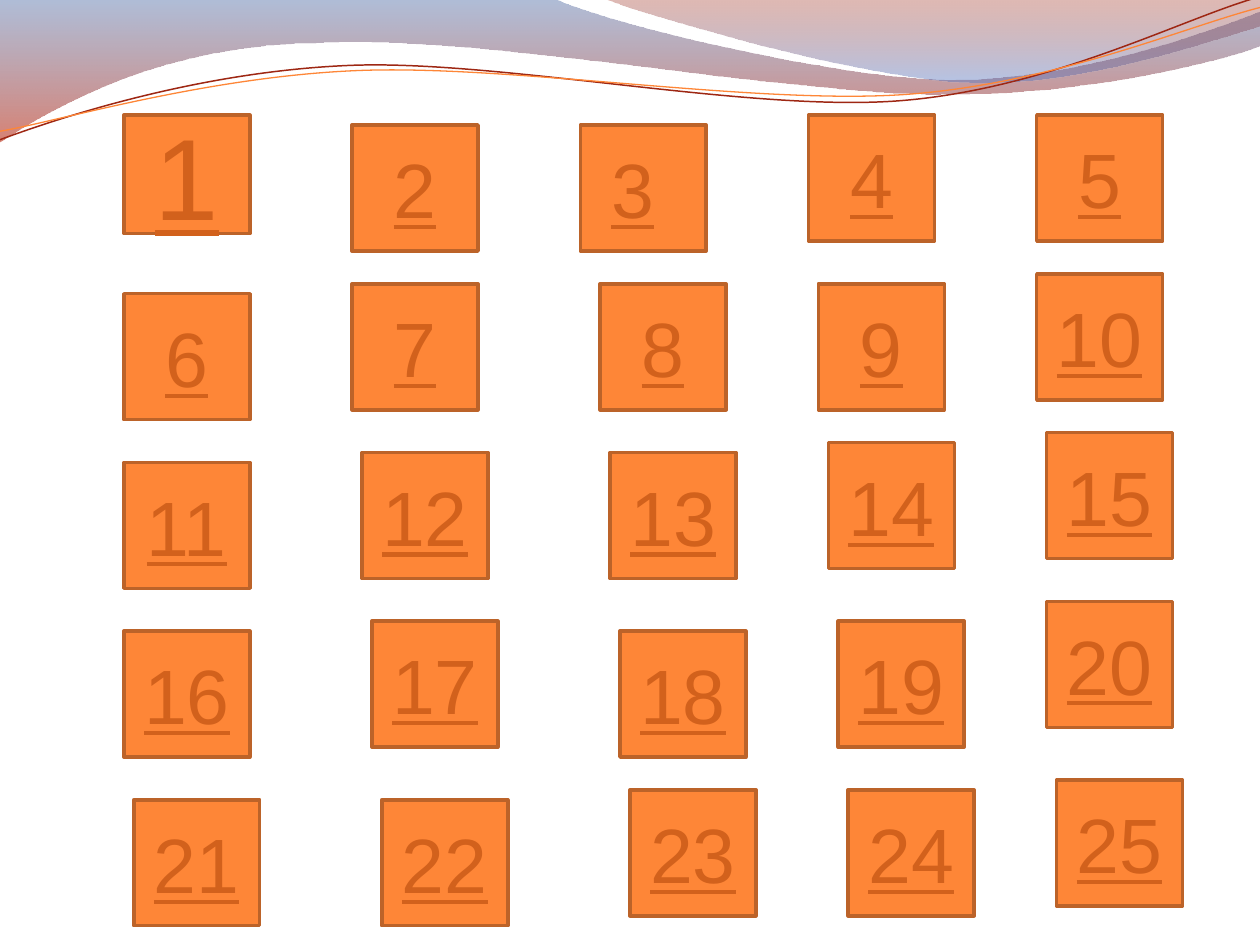
from dataclasses import dataclass
from typing import Optional

from lxml import etree
from pptx import Presentation
from pptx.dml.color import RGBColor
from pptx.enum.shapes import MSO_SHAPE
from pptx.enum.text import MSO_ANCHOR, PP_ALIGN
from pptx.oxml.ns import qn
from pptx.util import Pt

RECTANGLE = MSO_SHAPE.RECTANGLE
CENTER = PP_ALIGN.CENTER
MIDDLE = MSO_ANCHOR.MIDDLE

BLANK_LAYOUT = 6
COLUMN_COUNT = 5

# Tiles sit on a fine grid, and each is nudged by whole grid steps.
GRID_STEP = 5.67
GRID_LEFT, GRID_TOP = 70.8, 65.8
COLUMN_STEPS, ROW_STEPS = 23, 17
TILE_SIZE = 72
FIRST_TILE_HEIGHT = 67.7
NUDGES = (
    ((0, 0), (0, 1), (0, 1), (0, 0), (0, 0)),
    ((0, 1), (0, 0), (2, 0), (1, 0), (0, -1)),
    ((0, 1), (1, 0), (3, 0), (2, -1), (1, -2)),
    ((0, 1), (2, 0), (4, 1), (3, 0), (1, -2)),
    ((1, 1), (3, 1), (5, 0), (4, 0), (2, -1)),
)

Point = tuple[float, float]


@dataclass(frozen=True)
class Theme:
    font: str = "Arial"
    number_size: float = 44
    first_number_size: float = 66
    tile_fill: str = "FE8637"
    tile_border: str = "BC6329"
    tile_border_width: float = 2
    number: str = "D2611C"
    dark_line: str = "9E2713"
    light_line: str = "FE8637"


@dataclass(frozen=True)
class GradientStop:
    color: str
    opacity: int


@dataclass(frozen=True)
class Wave:
    """A segment holds one point for a straight line, three for a cubic curve."""
    start: Point
    segments: tuple[tuple[Point, ...], ...]
    gradient: tuple[GradientStop, ...] = ()
    line_color: Optional[str] = None
    line_width: float = 0
    rotation: float = 0


@dataclass(frozen=True)
class Tile:
    number: int
    left: float
    top: float
    height: float = TILE_SIZE
    number_size: float = Theme.number_size
    right_inset: float = 7.2


THEME = Theme()
LINE_ROTATION = 357.3

WAVES = (
    Wave(
        (0, -0.7),
        (
            ((316.8, -0.7),),
            ((342.7, 12.2), (478.1, 45.4), (545.8, 45.4)),
            ((614.2, 45.4), (689.8, 18.7), (720, 6.5)),
            ((720.7, 25.9),),
            ((707.8, 31.7), (626.4, 54.7), (537.1, 54)),
            ((447.8, 54), (275, 20.2), (185, 24.5)),
            ((92.9, 25.2), (33.1, 59.8), (-0.7, 81.4)),
        ),
        gradient=(GradientStop("4F6EA8", 45), GradientStop("B61A00", 55)),
    ),
    Wave(
        (344.9, -0.7),
        (
            ((366.5, 7.9), (491, 44.6), (553.7, 46.8)),
            ((616.3, 49.7), (691.9, 23), (720, 15.1)),
            ((720, 0),),
        ),
        gradient=(GradientStop("951500", 30), GradientStop("5681D1", 45)),
    ),
    Wave(
        (-1.4, 62.9),
        (
            ((33.8, 51.7), (114.1, 29.4), (199.8, 29.9)),
            ((284.9, 30.3), (425.8, 67.3), (512.4, 64.9)),
            ((599, 62.4), (676.4, 25.7), (720.2, 15.5)),
        ),
        line_color=THEME.dark_line,
        line_width=0.85,
        rotation=LINE_ROTATION,
    ),
    Wave(
        (-1.1, 58),
        (
            ((32.9, 53.8), (118.3, 32.5), (204.1, 33)),
            ((290.6, 33.4), (428.9, 63.1), (515.5, 61.4)),
            ((601.3, 59.6), (678.4, 30.1), (721.4, 21.3)),
        ),
        line_color=THEME.light_line,
        line_width=0.75,
        rotation=LINE_ROTATION,
    ),
)


def rgb(color: str) -> RGBColor:
    return RGBColor.from_string(color)


def bend_lines(shape, segments: tuple[tuple[Point, ...], ...]) -> None:
    """Turn each run of three straight steps that stands for a curve into one."""
    steps = iter(list(shape._element.iter(qn("a:lnTo"))))
    for segment in segments:
        group = [next(steps) for _ in segment]
        if len(group) == 3:
            curve = etree.Element(qn("a:cubicBezTo"))
            group[0].addprevious(curve)
            for step in group:
                curve.append(step[0])
                step.getparent().remove(step)


def fill_gradient(shape, stops: tuple[GradientStop, ...]) -> None:
    """Fill from top to bottom with translucent stops."""
    shape.fill.gradient()
    shape.fill.gradient_angle = 270
    for target, stop in zip(shape.fill.gradient_stops, stops):
        target.color.rgb = rgb(stop.color)
    colors = list(shape._element.spPr.iter(qn("a:srgbClr")))
    for color, stop in zip(colors, stops):
        etree.SubElement(color, qn("a:alpha"), val=str(stop.opacity * 1000))


def draw_wave(slide, wave: Wave) -> None:
    points = [(Pt(x), Pt(y)) for segment in wave.segments for x, y in segment]
    builder = slide.shapes.build_freeform(*(Pt(value) for value in wave.start))
    builder.add_line_segments(points, close=bool(wave.gradient))
    shape = builder.convert_to_shape()
    bend_lines(shape, wave.segments)
    shape.rotation = wave.rotation
    shape.shadow.inherit = False
    if wave.gradient:
        fill_gradient(shape, wave.gradient)
        shape.line.fill.background()
    else:
        shape.fill.background()
        shape.line.color.rgb = rgb(wave.line_color)
        shape.line.width = Pt(wave.line_width)


def make_tile(row: int, column: int) -> Tile:
    right, down = NUDGES[row][column]
    number = row * COLUMN_COUNT + column + 1
    left = GRID_LEFT + (column * COLUMN_STEPS + right) * GRID_STEP
    top = GRID_TOP + (row * ROW_STEPS + down) * GRID_STEP
    if number == 1:
        return Tile(number, left, top, FIRST_TILE_HEIGHT, THEME.first_number_size)
    if number == 3:
        return Tile(number, left, top, right_inset=19.4)
    return Tile(number, left, top)


def draw_tile(slide, tile: Tile) -> None:
    shape = slide.shapes.add_shape(
        RECTANGLE, Pt(tile.left), Pt(tile.top), Pt(TILE_SIZE), Pt(tile.height))
    shape.shadow.inherit = False
    shape.fill.solid()
    shape.fill.fore_color.rgb = rgb(THEME.tile_fill)
    shape.line.color.rgb = rgb(THEME.tile_border)
    shape.line.width = Pt(THEME.tile_border_width)
    text_frame = shape.text_frame
    text_frame.text = str(tile.number)
    text_frame.word_wrap = True
    text_frame.vertical_anchor = MIDDLE
    text_frame.margin_right = Pt(tile.right_inset)
    paragraph = text_frame.paragraphs[0]
    paragraph.alignment = CENTER
    font = paragraph.runs[0].font
    font.name = THEME.font
    font.size = Pt(tile.number_size)
    font.underline = True
    font.color.rgb = rgb(THEME.number)


def main() -> None:
    presentation = Presentation()
    presentation.slide_width, presentation.slide_height = Pt(720), Pt(540)
    slide = presentation.slides.add_slide(presentation.slide_layouts[BLANK_LAYOUT])
    for wave in WAVES:
        draw_wave(slide, wave)
    for row in range(len(NUDGES)):
        for column in range(COLUMN_COUNT):
            draw_tile(slide, make_tile(row, column))
    presentation.save("out.pptx")


if __name__ == "__main__":
    main()
